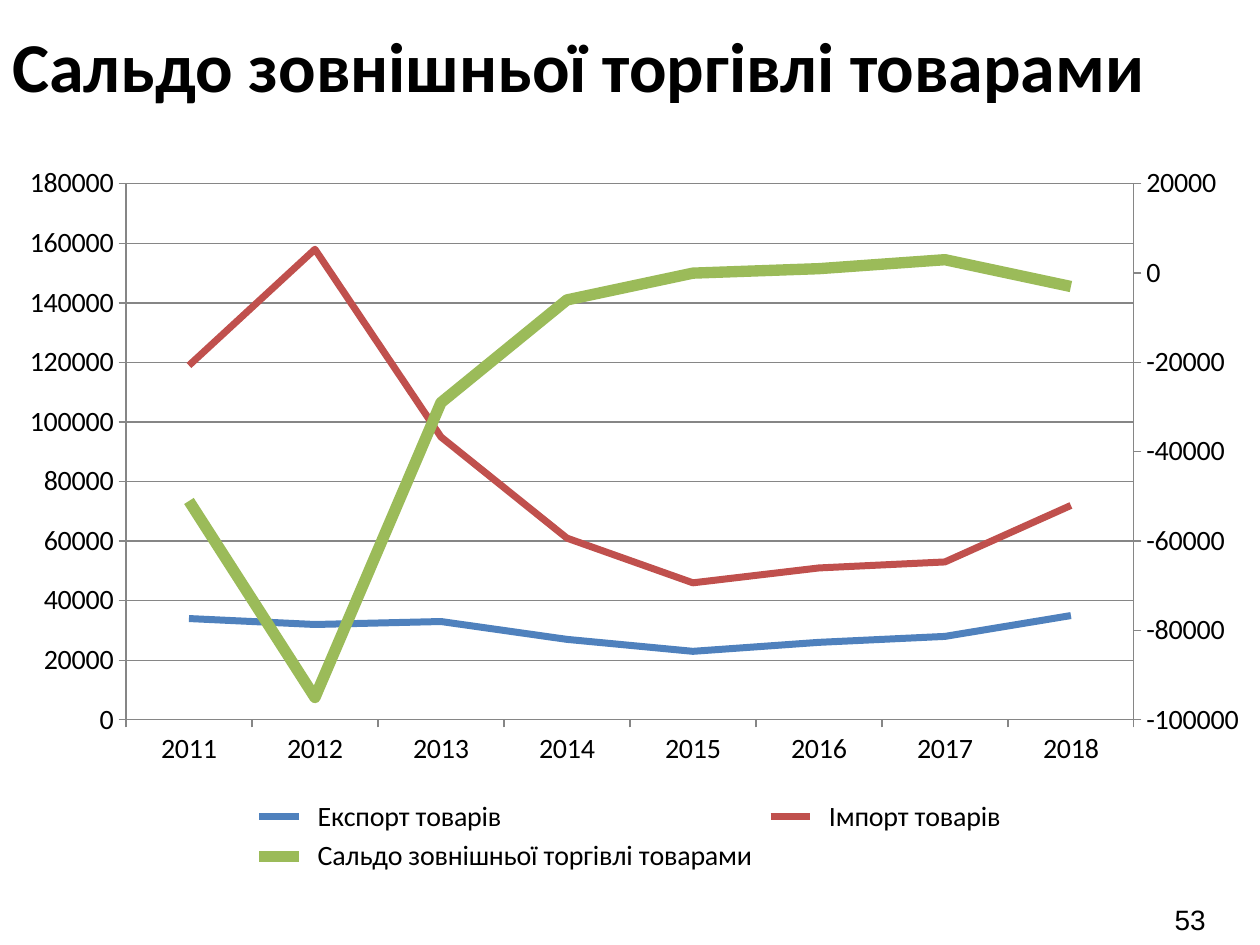
from copy import deepcopy

from lxml.etree import SubElement
from pptx import Presentation
from pptx.chart.data import CategoryChartData
from pptx.dml.color import RGBColor
from pptx.enum.chart import XL_CHART_TYPE, XL_LEGEND_POSITION, XL_TICK_MARK
from pptx.enum.text import MSO_ANCHOR, PP_ALIGN
from pptx.oxml import parse_xml
from pptx.oxml.ns import nsdecls, qn
from pptx.util import Pt

BLACK = RGBColor(0, 0, 0)
GRAY = RGBColor(0x86, 0x86, 0x86)
BLUE = RGBColor(0x4F, 0x81, 0xBD)
RED = RGBColor(0xC0, 0x50, 0x4D)
GREEN = RGBColor(0x9B, 0xBB, 0x59)

TITLE = "Сальдо зовнішньої торгівлі товарами"
PAGE = "53"
YEARS = [str(year) for year in range(2011, 2019)]
# name, values, colour, line width
SERIES = [
    ("  Експорт товарів",
     (34000, 32000, 33000, 27000, 23000, 26000, 28000, 35000), BLUE, 4),
    ("  Імпорт товарів",
     (85000, 126000, 62000, 34000, 23000, 25000, 25000, 37000), RED, 4),
    ("  Сальдо зовнішньої торгівлі товарами",
     (-51000, -95000, -29000, -6000, 0, 1000, 3000, -3000), GREEN, 6.5),
]
LAYOUT = {"x": 0.1, "y": 0.04, "w": 0.8, "h": 0.74}


def add_text(slide, text, box, font, size, bold=False,
             align=PP_ALIGN.LEFT, anchor=MSO_ANCHOR.TOP):
    frame = slide.shapes.add_textbox(*map(Pt, box)).text_frame
    frame.word_wrap = True
    frame.vertical_anchor = anchor
    par = frame.paragraphs[0]
    par.alignment = align
    run = par.add_run()
    run.text = text
    run.font.name, run.font.size, run.font.bold = font, Pt(size), bold
    run.font.color.rgb = BLACK


def style_axis(axis):
    axis.major_tick_mark = XL_TICK_MARK.OUTSIDE
    axis.minor_tick_mark = XL_TICK_MARK.NONE
    axis.format.line.color.rgb = GRAY
    axis.format.line.width = Pt(0.75)


def set_scale(axis, low, high, step):
    axis.minimum_scale, axis.maximum_scale, axis.major_unit = low, high, step


def split_right(chart, low, high, step):
    """Move the last series to a second value axis on the right."""
    area = chart.plots[0]._element.getparent()
    left = area.find(qn("c:lineChart"))
    right = deepcopy(left)
    left.remove(left.findall(qn("c:ser"))[-1])
    for ser in right.findall(qn("c:ser"))[:-1]:
        right.remove(ser)
    left.addnext(right)

    cat, val = area.find(qn("c:catAx")), area.find(qn("c:valAx"))
    cat2, val2 = deepcopy(cat), deepcopy(val)
    val.addnext(val2)
    val2.addnext(cat2)
    for ref, num in zip(right.findall(qn("c:axId")), ("501", "502")):
        ref.set("val", num)
    for axis, num, cross in ((cat2, "501", "502"), (val2, "502", "501")):
        axis.find(qn("c:axId")).set("val", num)
        axis.find(qn("c:crossAx")).set("val", cross)
    cat2.find(qn("c:delete")).set("val", "1")
    val2.remove(val2.find(qn("c:majorGridlines")))
    val2.find(qn("c:axPos")).set("val", "r")
    val2.find(qn("c:crosses")).set("val", "max")
    scale = val2.find(qn("c:scaling"))
    scale.find(qn("c:max")).set("val", str(high))
    scale.find(qn("c:min")).set("val", str(low))
    val2.find(qn("c:majorUnit")).set("val", str(step))


def place_plot(chart):
    area = chart.plots[0]._element.getparent()
    old = area.find(qn("c:layout"))
    if old is not None:
        area.remove(old)
    layout = parse_xml(f"<c:layout {nsdecls('c')}><c:manualLayout/></c:layout>")
    area.insert(0, layout)
    marks = [("layoutTarget", "inner"), ("xMode", "edge"), ("yMode", "edge")]
    for tag, val in marks + list(LAYOUT.items()):
        SubElement(layout[0], qn("c:" + tag)).set("val", str(val))


def add_lines(slide):
    data = CategoryChartData(number_format="0")
    data.categories = YEARS
    for name, vals, _, _ in SERIES:
        data.add_series(name, vals)
    chart = slide.shapes.add_chart(
        XL_CHART_TYPE.LINE_STACKED, Pt(0), Pt(88.5), Pt(720), Pt(414), data).chart
    chart.has_title = False
    chart.font.name, chart.font.size = "Calibri", Pt(16)
    chart.font.color.rgb = BLACK
    chart.has_legend = True
    chart.legend.position = XL_LEGEND_POSITION.BOTTOM
    chart.legend.include_in_layout = False

    plot = chart.plots[0]
    plot.vary_by_categories = False
    for ser, (_, _, color, width) in zip(plot.series, SERIES):
        ser.smooth = False
        ser.format.line.color.rgb = color
        ser.format.line.width = Pt(width)

    val = chart.value_axis
    for axis in (chart.category_axis, val):
        style_axis(axis)
    val.has_major_gridlines = True
    val.major_gridlines.format.line.color.rgb = GRAY
    val.major_gridlines.format.line.width = Pt(0.75)
    set_scale(val, 0, 180000, 20000)
    split_right(chart, -100000, 20000, 20000)
    place_plot(chart)


def main():
    deck = Presentation()
    deck.slide_width, deck.slide_height = Pt(720), Pt(540)
    slide = deck.slides.add_slide(deck.slide_layouts[6])
    add_text(slide, PAGE, (528, 511, 168, 29), "Arial", 16,
             align=PP_ALIGN.RIGHT, anchor=MSO_ANCHOR.MIDDLE)
    add_lines(slide)
    add_text(slide, TITLE, (0, 9.5, 666, 55.5), "Calibri", 40, bold=True)
    deck.save("out.pptx")


if __name__ == "__main__":
    main()
